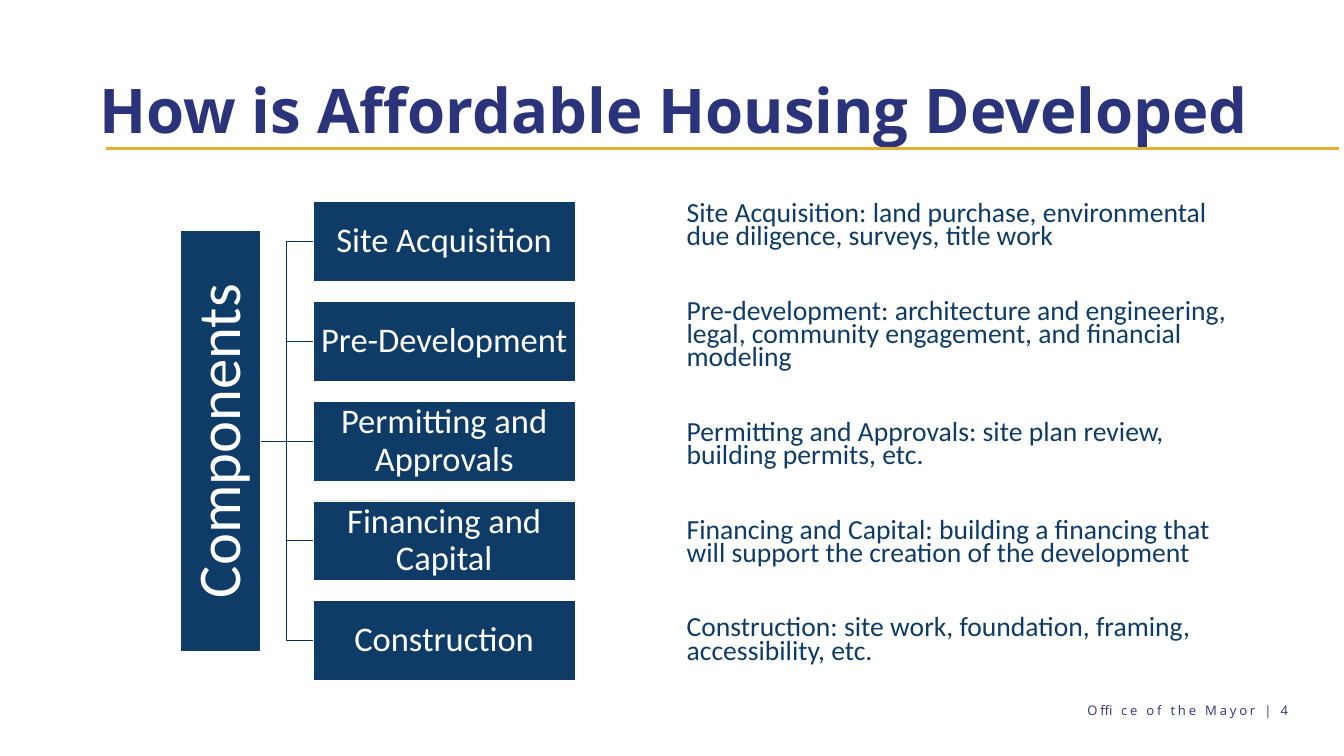
"""Build the slide on the components of affordable housing development."""
import pptx
import pptx.dml.color
import pptx.enum.shapes
import pptx.enum.text
import pptx.oxml
import pptx.oxml.ns
import pptx.util

PX = 9144
NAVY, INDIGO, GOLD, WHITE, BRANCH = "0E3C67", "2B347B", "E4B031", "FFFFFF", "0B3052"
ALIGN = pptx.enum.text.PP_ALIGN
ANCHOR = pptx.enum.text.MSO_ANCHOR

TITLE = "How is Affordable Housing Developed"
ROOT = "Components"
STEPS = [
    "Site Acquisition",
    "Pre-Development",
    "Permitting and Approvals",
    "Financing and Capital",
    "Construction",
]
DETAILS = [
    "Site Acquisition: land purchase, environmental due diligence, surveys, title work",
    "Pre-development: architecture and engineering, legal, community engagement, and financial modeling",
    "Permitting and Approvals: site plan review, building permits, etc.",
    "Financing and Capital: building a financing that will support the creation of the development",
    "Construction: site work, foundation, framing, accessibility, etc.",
]
FOOTER = "Office of the Mayor | 4"

BOX_HEIGHT = 119
STEP_LEFT, STEP_WIDTH, FIRST_TOP, LAST_TOP = 466, 390, 300, 894
ROOT_RIGHT, ROOT_LENGTH = 388, 626


def emu(*lengths):
    return [round(length * PX) for length in lengths]


def color(value):
    return pptx.dml.color.RGBColor.from_string(value)


def set_line(shape, value, points):
    shape.line.color.rgb = color(value)
    shape.line.width = pptx.util.Pt(points)


def write(shape, lines, font, size, value, align=ALIGN.LEFT, anchor=ANCHOR.TOP,
          margins=(10, 5), spacing=None, gap=0, bold=False):
    frame = shape.text_frame
    frame.word_wrap = True
    frame.vertical_anchor = anchor
    frame.margin_left, frame.margin_top = emu(*margins)
    frame.margin_right, frame.margin_bottom = emu(*margins)
    frame.text = "\n".join(lines)
    for index, paragraph in enumerate(frame.paragraphs):
        paragraph.alignment = align
        paragraph.line_spacing = spacing
        if index:
            paragraph.space_before = pptx.util.Pt(gap)
        for run in paragraph.runs:
            run.font.name = font
            run.font.size = pptx.util.Pt(size)
            run.font.bold = bold
            run.font.color.rgb = color(value)


def add_text(slide, box, lines, *style, **options):
    shape = slide.shapes.add_textbox(*emu(*box))
    write(shape, lines, *style, **options)
    return shape


def add_box(slide, box, label, size, margin):
    shape = slide.shapes.add_shape(pptx.enum.shapes.MSO_SHAPE.RECTANGLE, *emu(*box))
    shape.shadow.inherit = False
    shape.fill.solid()
    shape.fill.fore_color.rgb = color(NAVY)
    set_line(shape, WHITE, 1)
    write(shape, [label], "Calibri", size, WHITE, ALIGN.CENTER, ANCHOR.MIDDLE,
          (margin, margin), 0.9)
    return shape


def add_straight(slide, ends, value, points):
    line = slide.shapes.add_connector(pptx.enum.shapes.MSO_CONNECTOR.STRAIGHT, *emu(*ends))
    set_line(line, value, points)
    pptx.oxml.ns.qn("a:effectLst")
    effects = pptx.oxml.parse_xml(
        '<a:effectLst xmlns:a="http://schemas.openxmlformats.org/drawingml/2006/main"/>')
    line._element.spPr.append(effects)


def add_elbow(slide, start_y, end_y):
    bend = (ROOT_RIGHT + STEP_LEFT) / 2
    builder = slide.shapes.build_freeform(*emu(ROOT_RIGHT, start_y))
    points = [(bend, start_y), (bend, end_y), (STEP_LEFT, end_y)]
    builder.add_line_segments([emu(*point) for point in points], close=False)
    shape = builder.convert_to_shape()
    shape.shadow.inherit = False
    shape.fill.background()
    set_line(shape, BRANCH, 1)


def add_tree(slide):
    pitch = (LAST_TOP - FIRST_TOP) / (len(STEPS) - 1)
    tops = [FIRST_TOP + index * pitch for index in range(len(STEPS))]
    middle = (FIRST_TOP + LAST_TOP + BOX_HEIGHT) / 2
    for top in tops:
        center = top + BOX_HEIGHT / 2
        if center == middle:
            add_straight(slide, (ROOT_RIGHT, middle, STEP_LEFT, middle), BRANCH, 1)
        else:
            add_elbow(slide, middle, center)
    root_left = ROOT_RIGHT - (BOX_HEIGHT + ROOT_LENGTH) / 2
    root = add_box(slide, (root_left, middle - BOX_HEIGHT / 2, ROOT_LENGTH, BOX_HEIGHT),
                   ROOT, 65, 5)
    root.rotation = 270
    for top, step in zip(tops, STEPS):
        add_box(slide, (STEP_LEFT, top, STEP_WIDTH, BOX_HEIGHT), step, 37, 3)


def main():
    presentation = pptx.Presentation()
    presentation.slide_width, presentation.slide_height = emu(2000, 1125)
    slide = presentation.slides.add_slide(presentation.slide_layouts[6])
    add_text(slide, (138, 60, 1754, 217), [TITLE], "Open Sans", 66, INDIGO,
             anchor=ANCHOR.MIDDLE, spacing=0.9, bold=True)
    add_tree(slide)
    add_text(slide, (1012, 299, 850, 714), DETAILS, "Calibri", 29.6, NAVY,
             spacing=0.7, gap=55)
    footer = add_text(slide, (1484, 1046, 433, 24), [FOOTER], "Open Sans", 14, INDIGO,
                      align=ALIGN.RIGHT, margins=(0, 0))
    for run in footer.text_frame.paragraphs[0].runs:
        run.font._element.set("spc", "300")
    add_straight(slide, (158, 221, 1992, 221), GOLD, 4)
    presentation.save("out.pptx")


if __name__ == "__main__":
    main()
